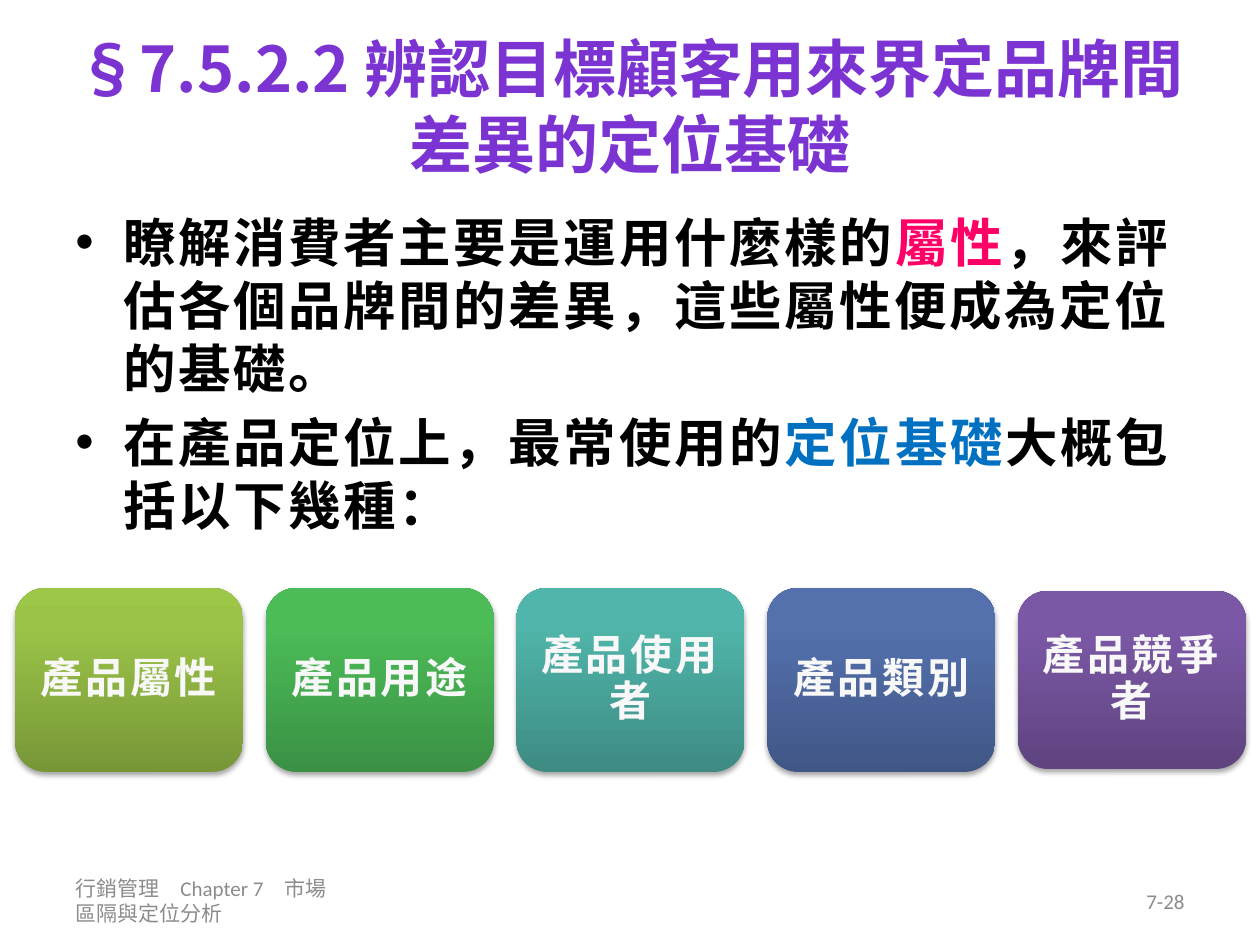
from dataclasses import dataclass

from lxml.etree import SubElement
from pptx import Presentation
from pptx.dml.color import RGBColor
from pptx.enum.shapes import MSO_SHAPE
from pptx.enum.text import MSO_ANCHOR, PP_ALIGN
from pptx.oxml.ns import qn
from pptx.util import Emu, Pt

EMU_PER_PX = 914400 / 126


@dataclass(frozen=True)
class Theme:
    cjk: str = "Noto Sans CJK SC"
    latin: str = "Calibri"
    title: str = "7B34D2"
    body: str = "000000"
    attribute: str = "FF0066"
    basis: str = "0070C0"
    footer: str = "8C8C8C"
    card_text: str = "F8F8F8"
    title_size: int = 36
    body_size: int = 30
    card_size: int = 24
    footer_size: int = 12
    tracking: int = 150


THEME = Theme()

BULLETS = [
    [("瞭解消費者主要是運用什麼樣的", THEME.body), ("屬性", THEME.attribute),
     ("，來評估各個品牌間的差異，這些屬性便成為定位的基礎。", THEME.body)],
    [("在產品定位上，最常使用的", THEME.body), ("定位基礎", THEME.basis),
     ("大概包括以下幾種：", THEME.body)],
]

# Label, then gradient colours from bottom to top
CARDS = [
    ("產品屬性", ("779737", "9BC348", "9DC746")),
    ("產品用途", ("3A9144", "4CBC58", "4ABF57")),
    ("產品使用者", ("3D8B83", "50B5AA", "4EB8AC")),
    ("產品類別", ("405786", "5471AE", "5271B0")),
    ("產品競爭者", ("5F4480", "7B58A6", "7C57A8")),
]


def px(length):
    return Emu(round(length * EMU_PER_PX))


def apply(target, values):
    for name, value in values.items():
        setattr(target, name, value)


def add_span(para, text, size, color, face, bold=False, tracking=0):
    span = para.add_run()
    span.text = text
    apply(span.font, {"size": Pt(size), "bold": bold, "name": face})
    span.font.color.rgb = RGBColor.from_string(color)
    props = span.font._element
    SubElement(props, qn("a:ea")).set("typeface", face)
    if tracking:
        props.set("spc", str(tracking))


def add_text_box(page, box, anchor=MSO_ANCHOR.TOP):
    frame = page.shapes.add_textbox(*map(px, box)).text_frame
    apply(frame, {"word_wrap": True, "vertical_anchor": anchor})
    return frame


def add_title(page, box):
    para = add_text_box(page, box, MSO_ANCHOR.MIDDLE).paragraphs[0]
    para.alignment = PP_ALIGN.CENTER
    add_span(para, "§7.5.2.2 辨認目標顧客用來界定品牌間差異的定位基礎",
             THEME.title_size, THEME.title, THEME.cjk, bold=True)


def add_bullets(page, box):
    frame = add_text_box(page, box)
    for index, spans in enumerate(BULLETS):
        para = frame.add_paragraph() if index else frame.paragraphs[0]
        if index:
            para.space_before = Pt(6)
        props = para._p.get_or_add_pPr()
        props.set("marL", str(px(48)))
        props.set("indent", str(-px(48)))
        SubElement(props, qn("a:buFont")).set("typeface", "Arial")
        SubElement(props, qn("a:buChar")).set("char", "•")
        for text, color in spans:
            add_span(para, text, THEME.body_size, color, THEME.cjk,
                     bold=True, tracking=THEME.tracking)


def set_gradient(shape, colors):
    shape.fill.gradient()
    shape.fill.gradient_angle = 90
    stops = shape._element.spPr.find(".//" + qn("a:gsLst"))
    for stop in list(stops):
        stops.remove(stop)
    for position, color in zip((0, 80000, 100000), colors):
        stop = SubElement(stops, qn("a:gs"), pos=str(position))
        SubElement(stop, qn("a:srgbClr"), val=color)


def set_soft_shadow(shape):
    shape.shadow.inherit = False
    effects = shape._element.spPr.find(qn("a:effectLst"))
    shadow = SubElement(effects, qn("a:outerShdw"), blurRad=str(Pt(3.1)),
                        dist=str(Pt(1.8)), dir="5400000", rotWithShape="0")
    color = SubElement(shadow, qn("a:srgbClr"), val="000000")
    SubElement(color, qn("a:alpha"), val="35000")


def add_card(page, box, label, colors):
    card = page.shapes.add_shape(MSO_SHAPE.ROUNDED_RECTANGLE, *map(px, box))
    set_gradient(card, colors)
    card.line.fill.background()
    set_soft_shadow(card)
    frame = card.text_frame
    apply(frame, {"word_wrap": True, "vertical_anchor": MSO_ANCHOR.MIDDLE})
    apply(frame, {f"margin_{side}": px(12)
                  for side in ("left", "top", "right", "bottom")})
    para = frame.paragraphs[0]
    apply(para, {"alignment": PP_ALIGN.CENTER, "line_spacing": 0.9})
    add_span(para, label, THEME.card_size, THEME.card_text, THEME.cjk,
             bold=True, tracking=THEME.tracking)


def add_cards(page, box):
    left, top, width, height = box
    card_width = 228
    pitch = (width - card_width) / (len(CARDS) - 1)
    for index, (label, colors) in enumerate(CARDS):
        # The last card is slightly shorter than the rest
        trim = 3 if index == len(CARDS) - 1 else 0
        add_card(page, (left + index * pitch, top + trim, card_width,
                        height - 2 * trim), label, colors)


def add_footer(page, box):
    left, top, width, height = box
    part_width = 294
    parts = [
        (left, "行銷管理　Chapter 7　市場區隔與定位分析", PP_ALIGN.LEFT),
        (left + width - part_width, "7-28", PP_ALIGN.RIGHT),
    ]
    for part_left, text, alignment in parts:
        frame = add_text_box(page, (part_left, top, part_width, height),
                             MSO_ANCHOR.MIDDLE)
        para = frame.paragraphs[0]
        para.alignment = alignment
        add_span(para, text, THEME.footer_size, THEME.footer, THEME.latin)


def main():
    deck = Presentation()
    apply(deck, {"slide_width": px(1260), "slide_height": px(945)})
    page = deck.slides.add_slide(deck.slide_layouts[6])
    add_title(page, (63, 16, 1134, 179))
    add_bullets(page, (63, 204, 1134, 397))
    add_cards(page, (15, 588, 1231, 184))
    add_footer(page, (63, 876, 1134, 50))
    deck.save("out.pptx")


if __name__ == "__main__":
    main()
